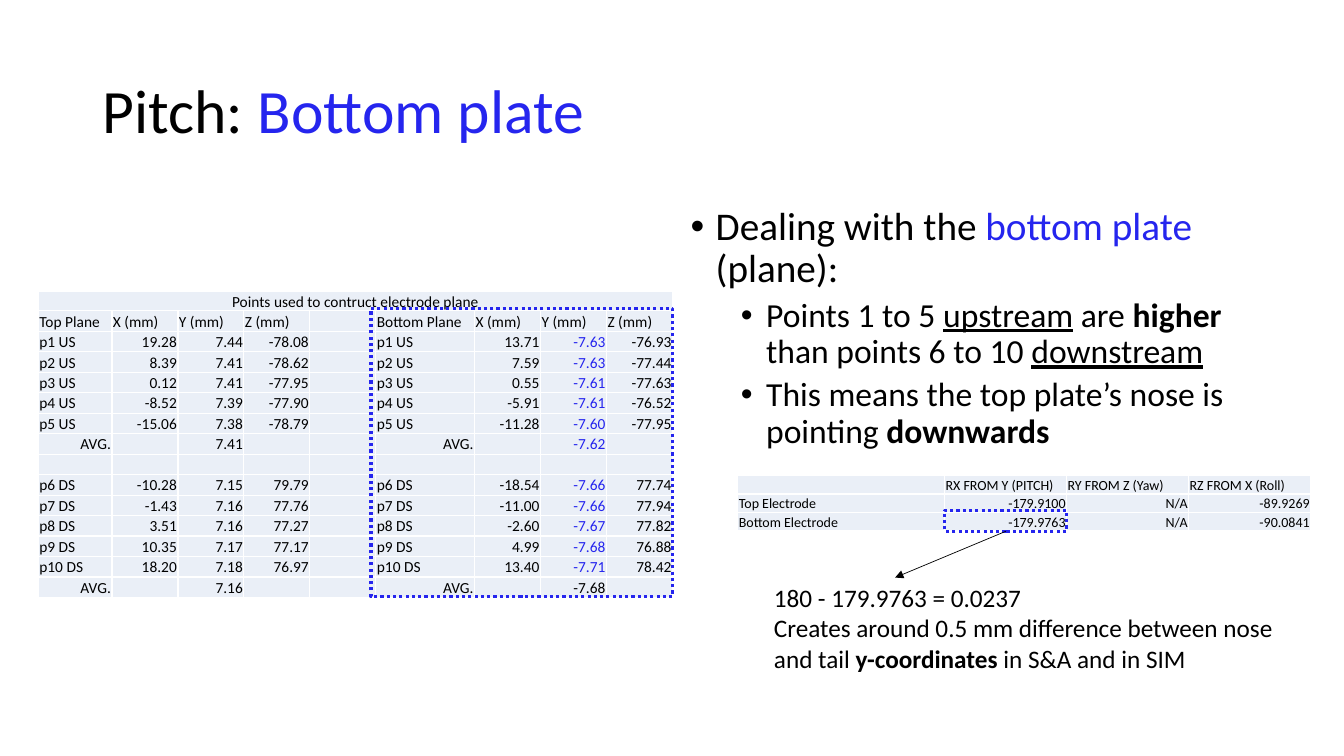
from lxml import etree
from pptx import Presentation, util as u
from pptx.dml.color import RGBColor
from pptx.enum import dml, shapes, text
from pptx.oxml.ns import qn

COLOURS = {"ink": "000000", "accent": "2525EE", "cell": "EAEFF7", "rule": "FFFFFF"}
UPSTREAM = [
    ["p1 US", "19.28", "7.44", "-78.08", "", "p1 US", "13.71", "-7.63", "-76.93"],
    ["p2 US", "8.39", "7.41", "-78.62", "", "p2 US", "7.59", "-7.63", "-77.44"],
    ["p3 US", "0.12", "7.41", "-77.95", "", "p3 US", "0.55", "-7.61", "-77.63"],
    ["p4 US", "-8.52", "7.39", "-77.90", "", "p4 US", "-5.91", "-7.61", "-76.52"],
    ["p5 US", "-15.06", "7.38", "-78.79", "", "p5 US", "-11.28", "-7.60", "-77.95"],
    ["AVG.", "", "7.41", "", "", "AVG.", "", "-7.62", ""],
]
DOWNSTREAM = [
    ["p6 DS", "-10.28", "7.15", "79.79", "", "p6 DS", "-18.54", "-7.66", "77.74"],
    ["p7 DS", "-1.43", "7.16", "77.76", "", "p7 DS", "-11.00", "-7.66", "77.94"],
    ["p8 DS", "3.51", "7.16", "77.27", "", "p8 DS", "-2.60", "-7.67", "77.82"],
    ["p9 DS", "10.35", "7.17", "77.17", "", "p9 DS", "4.99", "-7.68", "76.88"],
    ["p10 DS", "18.20", "7.18", "76.97", "", "p10 DS", "13.40", "-7.71", "78.42"],
    ["AVG.", "", "7.16", "", "", "AVG.", "", "-7.68", ""],
]
AXES = ["X (mm)", "Y (mm)", "Z (mm)"]
POINTS = [
    ["Points used to contruct electrode plane"] + [""] * 8,
    ["Top Plane", *AXES, "", "Bottom Plane", *AXES],
    *UPSTREAM, [""] * 9, *DOWNSTREAM,
]
ANGLES = [
    ["", "RX FROM Y (PITCH)", "RY FROM Z (Yaw)", "RZ FROM X (Roll)"],
    ["Top Electrode", "-179.9100", "N/A", "-89.9269"],
    ["Bottom Electrode", "-179.9763", "N/A", "-90.0841"],
]


class PlateSlide:
    font = "Calibri"
    bullet_indent = 0.25

    def __init__(self, deck):
        self.width, self.height = deck.slide_width, deck.slide_height
        self.slide = deck.slides.add_slide(deck.slide_layouts[1])

    def x(self, percent):
        return round(self.width * percent / 100)

    def y(self, percent):
        return round(self.height * percent / 100)

    def area(self, left, top, width, height):
        return self.x(left), self.y(top), self.x(width), self.y(height)

    def apply(self, target, values):
        for key, value in values.items():
            setattr(target, key, value)

    def add_runs(self, paragraph, runs, size):
        for wording, *marks in runs:
            run = paragraph.add_run()
            run.text = wording
            self.apply(run.font, {"name": self.font, "size": u.Pt(size),
                                  "bold": "bold" in marks, "underline": "underline" in marks})
            colour = "accent" if "accent" in marks else "ink"
            run.font.color.rgb = RGBColor.from_string(COLOURS[colour])

    def place(self, shape, area):
        self.apply(shape, dict(zip(("left", "top", "width", "height"), self.area(*area))))

    def title(self, area, runs):
        heading = self.slide.shapes.title
        self.place(heading, area)
        self.apply(heading.text_frame, {"vertical_anchor": text.MSO_ANCHOR.MIDDLE,
                                        "auto_size": text.MSO_AUTO_SIZE.NONE})
        line = heading.text_frame.paragraphs[0]
        self.apply(line, {"alignment": text.PP_ALIGN.LEFT, "line_spacing": 0.9})
        self.add_runs(line, runs, 44)

    def bullets(self, area, points):
        body = self.slide.placeholders[1]
        self.place(body, area)
        body.text_frame.auto_size = text.MSO_AUTO_SIZE.NONE
        for index, (level, runs) in enumerate(points):
            point = body.text_frame.add_paragraph() if index else body.text_frame.paragraphs[0]
            properties = point._p.get_or_add_pPr()
            properties.set("marL", str(u.Inches(self.bullet_indent + 0.5 * level)))
            properties.set("indent", str(-u.Inches(self.bullet_indent)))
            etree.SubElement(properties, qn("a:buFont")).set("typeface", "Arial")
            etree.SubElement(properties, qn("a:buChar")).set("char", "•")
            self.apply(point, {"level": level, "line_spacing": 0.9,
                               "space_before": u.Pt(5 if index else 0)})
            self.add_runs(point, runs, 24 if level else 28)

    def note(self, area, lines):
        frame = self.slide.shapes.add_textbox(*self.area(*area)).text_frame
        frame.word_wrap = True
        for index, runs in enumerate(lines):
            line = frame.add_paragraph() if index else frame.paragraphs[0]
            self.add_runs(line, runs, 18)

    def border(self, cell):
        properties = cell._tc.get_or_add_tcPr()
        for index, side in enumerate(("lnL", "lnR", "lnT", "lnB")):
            edge = etree.Element(qn(f"a:{side}"), w=str(u.Pt(1)))
            paint = etree.SubElement(edge, qn("a:solidFill"))
            etree.SubElement(paint, qn("a:srgbClr")).set("val", COLOURS["rule"])
            properties.insert(index, edge)

    def cell(self, cell, wording, size, marks):
        self.apply(cell, {"margin_left": u.Inches(0.01), "margin_right": u.Inches(0.01),
                          "margin_top": u.Inches(0.01), "margin_bottom": 0,
                          "vertical_anchor": text.MSO_ANCHOR.BOTTOM})
        cell.fill.solid()
        cell.fill.fore_color.rgb = RGBColor.from_string(COLOURS["cell"])
        self.border(cell)
        line = cell.text_frame.paragraphs[0]
        if not wording:
            line._p.get_or_add_endParaRPr().set("sz", str(size * 100))
            return
        numeric = wording in ("AVG.", "N/A") or wording.lstrip("-")[0].isdigit()
        line.alignment = text.PP_ALIGN.RIGHT if numeric else text.PP_ALIGN.LEFT
        self.add_runs(line, [(wording, *marks)], size)

    def table(self, left, top, columns, rows, values, size, accented=()):
        frame = self.slide.shapes.add_table(
            len(rows), len(columns), *self.area(left, top, sum(columns), sum(rows)))
        grid = frame.table
        self.apply(grid, {"first_row": False, "horz_banding": False})
        for column, width in zip(grid.columns, columns):
            column.width = self.x(width)
        for row, height in zip(grid.rows, rows):
            row.height = self.y(height)
        for r, record in enumerate(values):
            for c, wording in enumerate(record):
                marks = ("accent",) if (r, c) in accented else ()
                self.cell(grid.cell(r, c), wording, size, marks)
        return grid

    def highlight(self, area):
        frame = self.slide.shapes.add_shape(shapes.MSO_SHAPE.RECTANGLE, *self.area(*area))
        frame.shadow.inherit = False
        frame.fill.background()
        frame.line.color.rgb = RGBColor.from_string(COLOURS["accent"])
        self.apply(frame.line, {"width": u.Pt(2.25), "dash_style": dml.MSO_LINE.ROUND_DOT})

    def arrow(self, start, end):
        pointer = self.slide.shapes.add_connector(
            shapes.MSO_CONNECTOR.STRAIGHT,
            self.x(start[0]), self.y(start[1]), self.x(end[0]), self.y(end[1]))
        pointer.line.color.rgb = RGBColor.from_string(COLOURS["ink"])
        pointer.line.width = u.Pt(0.5)
        etree.SubElement(pointer.line._get_or_add_ln(), qn("a:tailEnd")).set("type", "triangle")
        etree.SubElement(pointer._element.spPr, qn("a:effectLst"))


def main():
    deck = Presentation()
    deck.slide_width, deck.slide_height = u.Inches(13.33), u.Inches(7.5)
    pitch = PlateSlide(deck)
    pitch.title((6.9, 5.33, 86.25, 19.33), [("Pitch: ",), ("Bottom plate", "accent")])
    pitch.bullets((50.63, 26.67, 42.5, 63.47), [
        (0, [("Dealing with the ",), ("bottom plate ", "accent"), ("(plane):",)]),
        (1, [("Points 1 to 5 ",), ("upstream", "underline"), (" are ",), ("higher", "bold"),
             (" than points 6 to 10 ",), ("downstream", "underline")]),
        (1, [("This means the top plate’s nose is pointing ",), ("downwards", "bold")]),
    ])
    pitch.note((56.85, 76.4, 38.63, 13.47), [
        [("180 - 179.9763 = 0.0237",)],
        [("Creates around 0.5 mm difference between nose and tail ",),
         ("y-coordinates", "bold"), (" in S&A and in SIM",)],
    ])
    pitch.table(54.9, 62.93, [15.38] + [9.08] * 3, [2.43] * 3, ANGLES, 10)
    pitch.highlight((70.28, 67.47, 9.08, 2.8))
    pitch.arrow((74.85, 70.27), (66.6, 76.4))
    bottom_heights = {(row, 7) for row in range(2, len(POINTS) - 1)}
    points = pitch.table(2.85, 38.53, [5.48] + [4.91] * 4 + [7.35] + [4.91] * 3,
                         [2.4] + [2.71] * 14, POINTS, 11, bottom_heights)
    caption = points.cell(0, 0)
    caption.merge(points.cell(0, 8))
    caption.vertical_anchor = text.MSO_ANCHOR.MIDDLE
    caption.text_frame.paragraphs[0].alignment = text.PP_ALIGN.CENTER
    pitch.highlight((27.6, 40.8, 22.42, 38.13))
    deck.save("out.pptx")


if __name__ == "__main__":
    main()
